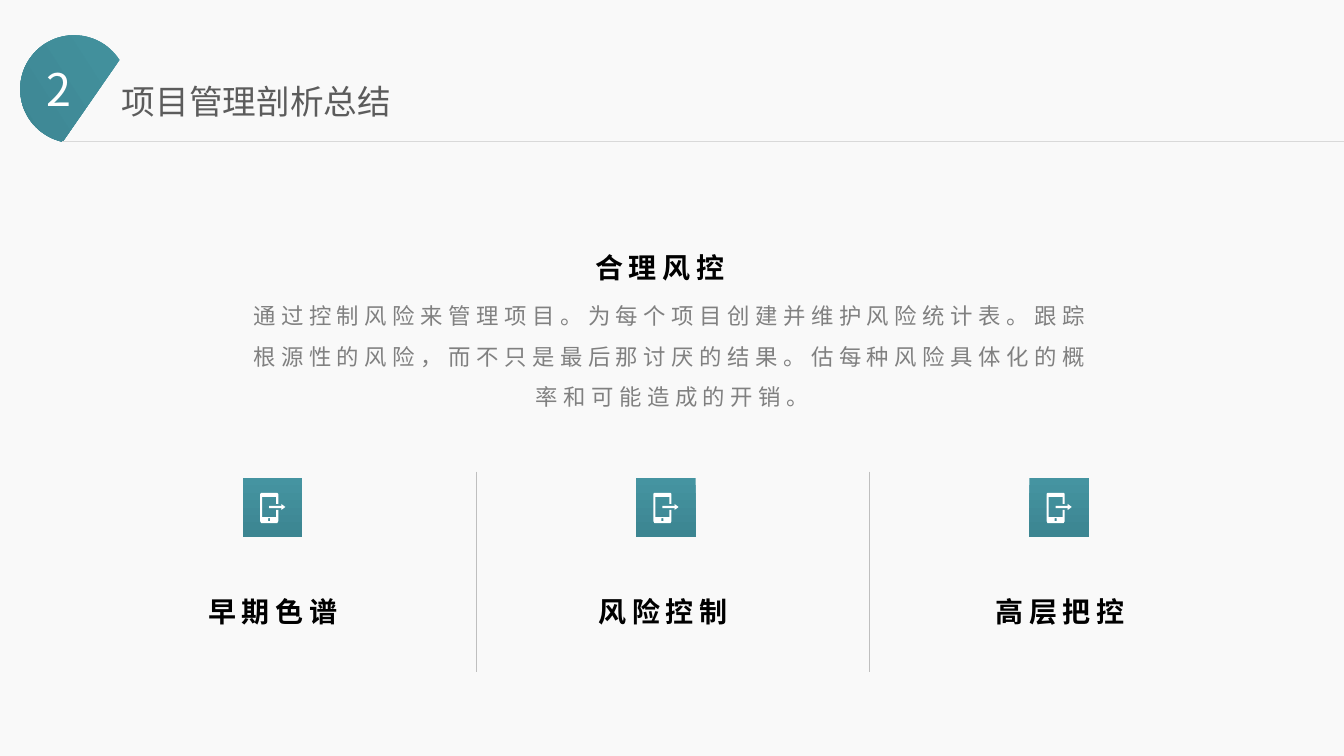
from lxml import etree
from pptx import Presentation
from pptx.dml.color import RGBColor
from pptx.enum.shapes import MSO_CONNECTOR, MSO_SHAPE
from pptx.enum.text import MSO_ANCHOR, MSO_AUTO_SIZE, PP_ALIGN
from pptx.oxml.ns import qn
from pptx.util import Inches, Pt

LEFT, MID = PP_ALIGN.LEFT, PP_ALIGN.CENTER
TOP, FIXED = MSO_ANCHOR.TOP, MSO_AUTO_SIZE.NONE
CHORD, RECT = MSO_SHAPE.CHORD, MSO_SHAPE.RECTANGLE
STRAIGHT = MSO_CONNECTOR.STRAIGHT

TITLE = "项目管理剖析总结"
NUMBER = "2"
HEAD = "合理风控"
BODY = ("通过控制风险来管理项目。为每个项目创建并维护风险统计表。"
        "跟踪根源性的风险，而不只是最后那讨厌的结果。"
        "估每种风险具体化的概率和可能造成的开销。")
TOPICS = [("早期色谱", 1.75), ("风险控制", 5.62), ("高层把控", 9.56)]

FONT = "Noto Sans CJK JP"
COLORS = {"back": "F9F9F9", "light": "4594A1", "dark": "3C8591",
          "title": "5C5C5C", "body": "808080", "head": "000000",
          "white": "FFFFFF", "rule": "D9D9D9", "split": "BFBFBF"}

WIDE, HIGH = 13.33, 7.5
PITCH = 3.9
TILE_X, TILE_Y, TILE = 2.41, 4.74, 0.59
ICON_DX, ICON_DY = 0.17, 0.15
SPLIT_X, SPLIT_Y, SPLIT_END = 4.72, 4.68, 6.67
RULE_Y = 1.4
LABEL_W, LABEL_H = 1.91, 0.55

PHONE = [(1, 0), (17, 0), (18, 1), (18, 11), (16, 11), (16, 4), (2, 4), (2, 24),
         (16, 24), (16, 17), (18, 17), (18, 28), (17, 30), (1, 30), (0, 28), (0, 1)]
ARROW = [(21, 11), (25, 14), (21, 17), (21, 15), (9, 15), (9, 13), (21, 13)]
BUTTON = [(8.5, 25), (9.5, 25), (10.5, 26), (10.5, 27),
          (9.5, 28), (8.5, 28), (7.5, 27), (7.5, 26)]


def color(name):
    return RGBColor.from_string(COLORS[name])


def box(*sides):
    return [Inches(side) for side in sides]


def write(shape, text, size, tint, align=LEFT, bold=False, gap=0, lead=1.0):
    frame = shape.text_frame
    frame.word_wrap = True
    frame.auto_size = FIXED
    frame.vertical_anchor = TOP
    frame.text = text
    para = frame.paragraphs[0]
    para.alignment = align
    para.line_spacing = lead
    run = para.runs[0]
    font = run.font
    font.size, font.bold, font.name = Pt(size), bold, FONT
    font.color.rgb = color(tint)
    props = run._r.get_or_add_rPr()
    etree.SubElement(props, qn("a:ea")).set("typeface", FONT)
    if gap:
        props.set("spc", str(gap * 100))


def label(slide, text, place, *style, **more):
    write(slide.shapes.add_textbox(*box(*place)), text, *style, **more)


def heading(slide, text, left, top):
    label(slide, text, (left, top, LABEL_W, LABEL_H), 20, "head",
          align=MID, bold=True, gap=4, lead=1.5)


def panel(slide, kind, place, turn=0):
    shape = slide.shapes.add_shape(kind, *box(*place))
    shape.rotation = turn
    shape.shadow.inherit = False
    shape.line.fill.background()
    shape.fill.gradient()
    shape.fill.gradient_angle = 270
    for stop, name in zip(shape.fill.gradient_stops, ("light", "dark")):
        stop.color.rgb = color(name)


def line(slide, ends, tint, width):
    rule = slide.shapes.add_connector(STRAIGHT, *box(*ends))
    rule.line.color.rgb = color(tint)
    rule.line.width = Pt(width)
    etree.SubElement(rule._element.spPr, qn("a:effectLst"))


def icon(slide, left, top):
    pen = slide.shapes.build_freeform(*PHONE[0], scale=Inches(0.01))
    pen.add_line_segments(PHONE[1:])
    for part in (ARROW, BUTTON):
        pen.move_to(*part[0])
        pen.add_line_segments(part[1:])
    shape = pen.convert_to_shape(*box(left, top))
    shape.shadow.inherit = False
    shape.fill.solid()
    shape.fill.fore_color.rgb = color("white")
    shape.line.fill.background()


def main():
    deck = Presentation()
    deck.slide_width, deck.slide_height = box(WIDE, HIGH)
    slide = deck.slides.add_slide(deck.slide_layouts[5])
    slide.background.fill.solid()
    slide.background.fill.fore_color.rgb = color("back")

    title = slide.shapes.title
    title.left, title.top, title.width, title.height = box(1.11, 0.75, 4.19, 0.5)
    write(title, TITLE, 24, "title")
    panel(slide, CHORD, (0.2, 0.35, 1.07, 1.07), 57.3)
    line(slide, (0.62, RULE_Y, WIDE, RULE_Y), "rule", 0.5)
    label(slide, NUMBER, (0.36, 0.56, 0.52, 0.64), 32, "white")

    heading(slide, HEAD, 5.59, 2.27)
    label(slide, BODY, (2.41, 2.82, 8.52, 1.27), 16, "body",
          align=MID, gap=4, lead=1.5)

    for col, (text, left) in enumerate(TOPICS):
        shift = col * PITCH
        tile = TILE_X + shift
        panel(slide, RECT, (tile, TILE_Y, TILE, TILE))
        icon(slide, tile + ICON_DX, TILE_Y + ICON_DY)
        heading(slide, text, left, 5.68)
        if col < len(TOPICS) - 1:
            split = SPLIT_X + shift
            line(slide, (split, SPLIT_Y, split, SPLIT_END), "split", 0.25)

    deck.save("out.pptx")


if __name__ == "__main__":
    main()
